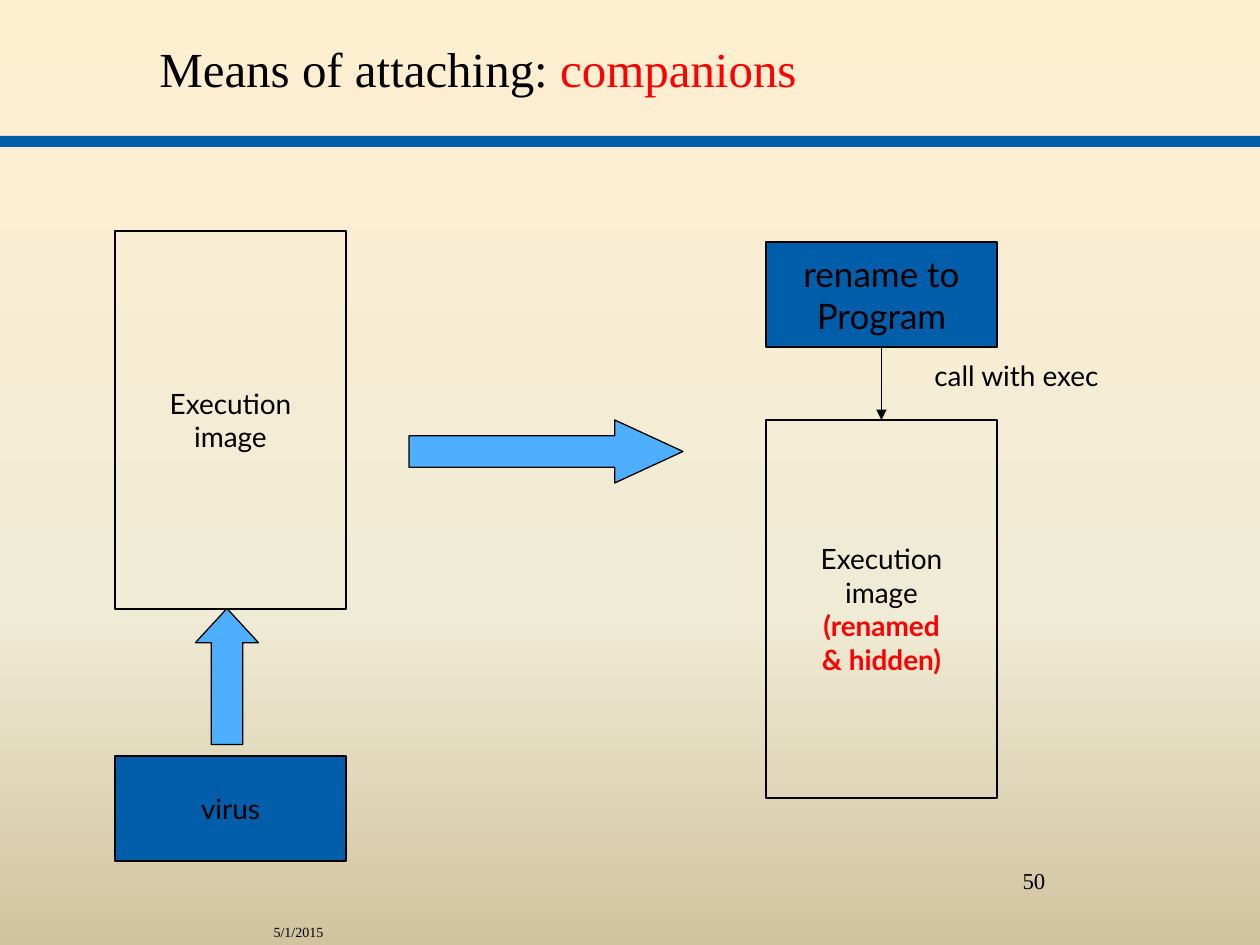
from pptx import Presentation
from pptx.dml.color import RGBColor
from pptx.enum.shapes import MSO_CONNECTOR, MSO_SHAPE
from pptx.enum.text import MSO_ANCHOR, PP_ALIGN
from pptx.oxml import parse_xml
from pptx.oxml.ns import nsdecls
from pptx.util import Emu, Pt

RECT, ARROW = MSO_SHAPE.RECTANGLE, MSO_SHAPE.RIGHT_ARROW
STRAIGHT = MSO_CONNECTOR.STRAIGHT
LEFT, CENTER, RIGHT = PP_ALIGN.LEFT, PP_ALIGN.CENTER, PP_ALIGN.RIGHT
TOP, MIDDLE = MSO_ANCHOR.TOP, MSO_ANCHOR.MIDDLE
SCALE = 914400 / 126  # EMU per px


class Theme:
    ink, red, blue, sky = "000000", "FF0000", "005DAA", "4FAFFF"
    back = [(0, "FFEFD1"), (65, "F0EBD5"), (100, "D1C39F")]
    serif, sans = "Times New Roman", "Lato"
    title, large, body, page, date = 28, 20, 16, 13, 8
    line = 0.75


# Content: a text is a list of paragraphs, a paragraph a list of (words, style)
PLAIN, RED = {}, {"color": Theme.red}
HOT = {"color": Theme.red, "bold": True}

BAR = (0, 136, 1260, 11)
LABELS = [
    ((84, 917, 252, 21), [[("5/1/2015", PLAIN)]],
     dict(size=Theme.date, font=Theme.serif, align=RIGHT)),
    ((903, 861, 262, 63), [[("50", PLAIN)]],
     dict(size=Theme.page, font=Theme.serif, align=CENTER)),
    ((147, 10, 1018, 116),
     [[("Means of attaching: ", PLAIN), ("companions", RED)]],
     dict(size=Theme.title, font=Theme.serif, anchor=MIDDLE)),
    ((922, 352, 275, 63), [[("call with exec", PLAIN)]], {}),
]

WIDE, LOW, TALL = 231, 105, 378
OLD_X, NEW_X = 115, 766
BOXES = {
    "virus": ((OLD_X, 756, WIDE, LOW), Theme.blue, Theme.body,
              [[("virus", PLAIN)]]),
    "image": ((OLD_X, 231, WIDE, TALL), None, Theme.body,
              [[("Execution", PLAIN)], [("image", PLAIN)]]),
    "program": ((NEW_X, 242, WIDE, LOW), Theme.blue, Theme.large,
                [[("rename to", PLAIN)], [("Program", PLAIN)]]),
    "hidden": ((NEW_X, 420, WIDE, TALL), None, Theme.body,
               [[("Execution\nimage", PLAIN)], [("(renamed", HOT)],
                [("& hidden)", HOT)]]),
}
# Place before turning, head length, turn in degrees
ARROWS = [((409, 420, 274, 63), 1.083, 0),
          ((159, 645, 136, 63), 0.542, 270)]


def emu(*px):
    return [Emu(round(n * SCALE)) for n in px]


def rgb(code):
    return RGBColor.from_string(code)


def write(shape, text, size=Theme.body, font=Theme.sans, align=LEFT, anchor=TOP):
    frame = shape.text_frame
    frame.word_wrap = True
    frame.vertical_anchor = anchor
    for i, runs in enumerate(text):
        para = frame.add_paragraph() if i else frame.paragraphs[0]
        para.alignment = align
        for words, style in runs:
            for j, part in enumerate(words.split("\n")):
                if j:
                    para.add_line_break()
                run = para.add_run()
                run.text = part
                run.font.name, run.font.size = font, Pt(size)
                run.font.bold = style.get("bold", False)
                run.font.color.rgb = rgb(style.get("color", Theme.ink))


def draw(slide, kind, place, fill=None, edge=True):
    shape = slide.shapes.add_shape(kind, *emu(*place))
    shape.shadow.inherit = False
    if fill:
        shape.fill.solid()
        shape.fill.fore_color.rgb = rgb(fill)
    else:
        shape.fill.background()
    if edge:
        shape.line.color.rgb = rgb(Theme.ink)
        shape.line.width = Pt(Theme.line)
    else:
        shape.line.fill.background()
    return shape


def paint(slide):
    stops = "".join(f'<a:gs pos="{pos * 1000}"><a:srgbClr val="{code}"/></a:gs>'
                    for pos, code in Theme.back)
    slide.element.cSld.insert(0, parse_xml(
        f'<p:bg {nsdecls("p", "a")}><p:bgPr><a:gradFill rotWithShape="1">'
        f'<a:gsLst>{stops}</a:gsLst><a:lin ang="5400000" scaled="0"/>'
        '</a:gradFill><a:effectLst/></p:bgPr></p:bg>'))


def join(slide, start, end):
    link = slide.shapes.add_connector(STRAIGHT, 0, 0, 0, 0)
    link.begin_connect(start, 2)
    link.end_connect(end, 0)
    link.line.color.rgb = rgb(Theme.ink)
    link.line.width = Pt(Theme.line)
    link.line._get_or_add_ln().append(
        parse_xml(f'<a:tailEnd {nsdecls("a")} type="triangle"/>'))
    link._element.spPr.append(parse_xml(f'<a:effectLst {nsdecls("a")}/>'))


def main():
    deck = Presentation()
    deck.slide_width, deck.slide_height = emu(1260, 945)
    slide = deck.slides.add_slide(deck.slide_layouts[6])

    # Background, title bar and labels
    paint(slide)
    draw(slide, RECT, BAR, Theme.blue, edge=False)
    for place, text, form in LABELS:
        write(slide.shapes.add_textbox(*emu(*place)), text, **form)

    # Boxes and the call between them
    made = {}
    for name, (place, fill, size, text) in BOXES.items():
        made[name] = draw(slide, RECT, place, fill)
        write(made[name], text, size=size, align=CENTER, anchor=MIDDLE)
    join(slide, made["program"], made["hidden"])

    # Block arrows
    for place, head, turn in ARROWS:
        arrow = draw(slide, ARROW, place, Theme.sky)
        arrow.adjustments[0], arrow.adjustments[1] = 0.5, head
        arrow.rotation = turn

    deck.save("out.pptx")


if __name__ == "__main__":
    main()
